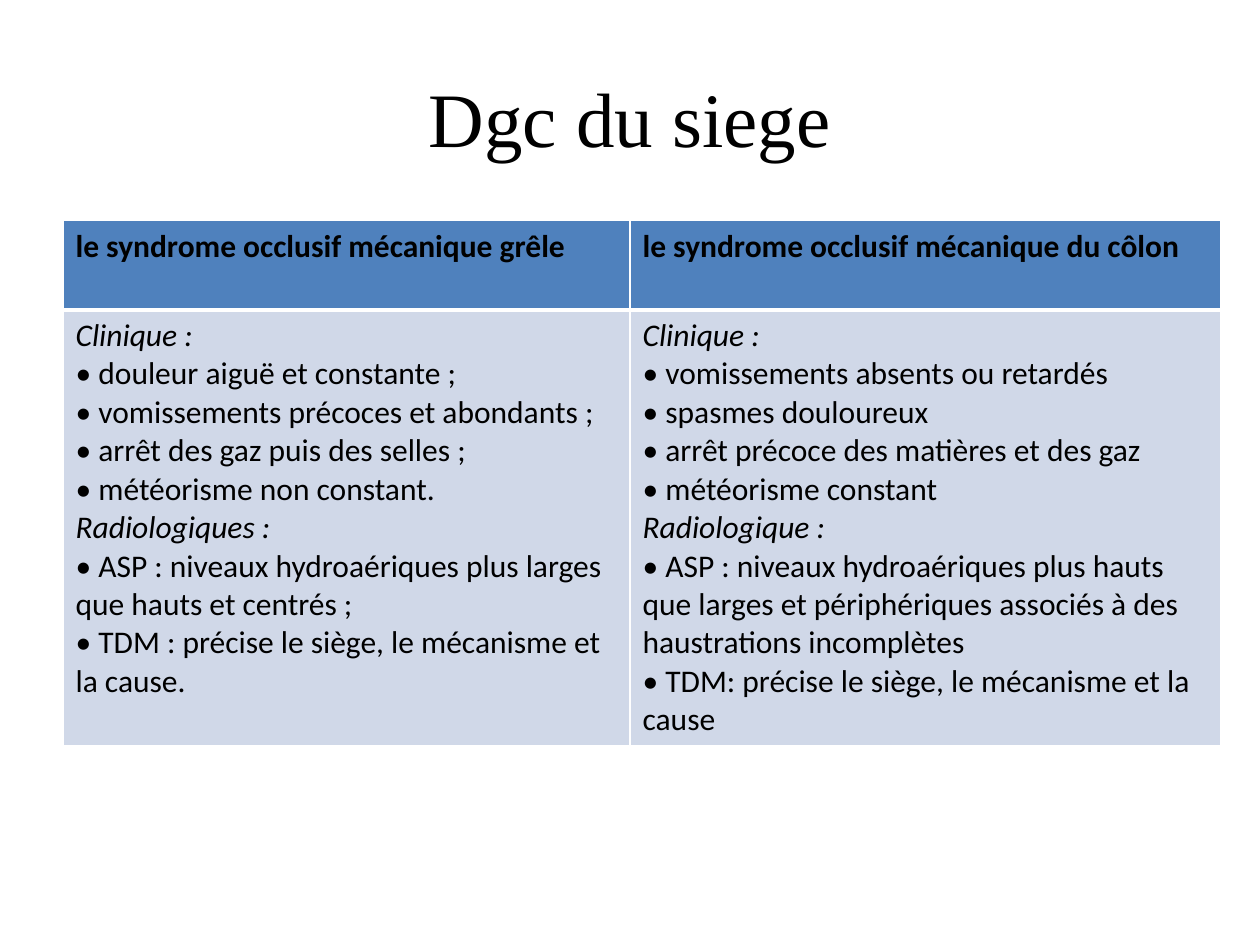
from lxml import etree
from pptx import Presentation
from pptx import util as u
from pptx.dml.color import RGBColor
from pptx.enum import text
from pptx.oxml.ns import qn


def paint(fill, color):
    fill.solid()
    fill.fore_color.rgb = RGBColor.from_string(color)


def write(par, words, size, face, bold=False, italic=False):
    run = par.add_run()
    run.text = words
    font = run.font
    font.size, font.name = u.Pt(size), face
    font.bold, font.italic = bold, italic
    paint(font.fill, "000000")


deck = Presentation()
deck.slide_width, deck.slide_height = u.Cm(25.4), u.Cm(19.05)
slide = deck.slides.add_slide(deck.slide_layouts[5])

# Title
title = slide.shapes.title
title.left, title.top = u.Cm(1.27), u.Cm(0.76)
title.width, title.height = u.Cm(22.86), u.Cm(3.18)
title.text_frame.vertical_anchor = text.MSO_ANCHOR.MIDDLE
par = title.text_frame.paragraphs[0]
par.alignment = text.PP_ALIGN.CENTER
write(par, "Dgc du siege", 44, "Times New Roman")

# Table content: heading, then (subheading, points) groups
sides = [
    ("le syndrome occlusif mécanique grêle", [
        ("Clinique :", [
            "douleur aiguë et constante ;",
            "vomissements précoces et abondants ;",
            "arrêt des gaz puis des selles ;",
            "météorisme non constant."]),
        ("Radiologiques :", [
            "ASP : niveaux hydroaériques plus larges que hauts et centrés ;",
            "TDM : précise le siège, le mécanisme et la cause."])]),
    ("le syndrome occlusif mécanique du côlon", [
        ("Clinique :", [
            "vomissements absents ou retardés",
            "spasmes douloureux",
            "arrêt précoce des matières et des gaz",
            "météorisme constant"]),
        ("Radiologique :", [
            "ASP : niveaux hydroaériques plus hauts que larges et "
            "périphériques associés à des haustrations incomplètes",
            "TDM: précise le siège, le mécanisme et la cause"])]),
]

# Table grid
widths, heights = [11.43, 11.91], [1.8, 8.76]
table = slide.shapes.add_table(
    2, 2, u.Cm(1.27), u.Cm(4.45), u.Cm(sum(widths)), u.Cm(sum(heights))).table
for col, width in zip(table.columns, widths):
    col.width = u.Cm(width)
for row, height in zip(table.rows, heights):
    row.height = u.Cm(height)

# Cell text
for col, (head, groups) in enumerate(sides):
    write(table.cell(0, col).text_frame.paragraphs[0], head, 18, "Calibri", bold=True)
    lines = []
    for sub, points in groups:
        lines.append((sub, True))
        lines += [("• " + point, False) for point in points]
    frame = table.cell(1, col).text_frame
    for i, (line, slant) in enumerate(lines):
        par = frame.add_paragraph() if i else frame.paragraphs[0]
        write(par, line, 18, "Calibri", italic=slant)

# Cell fills and white borders, thicker under the heading row
for row, (color, thick) in enumerate([("4F81BD", "lnB"), ("D0D8E8", "lnT")]):
    for cell in table.rows[row].cells:
        paint(cell.fill, color)
        props = cell._tc.get_or_add_tcPr()
        for i, side in enumerate(["lnL", "lnR", "lnT", "lnB"]):
            line = etree.Element(qn("a:" + side), w=str(u.Pt(3 if side == thick else 1)))
            solid = etree.SubElement(line, qn("a:solidFill"))
            etree.SubElement(solid, qn("a:srgbClr"), val="FFFFFF")
            props.insert(i, line)

deck.save("out.pptx")
